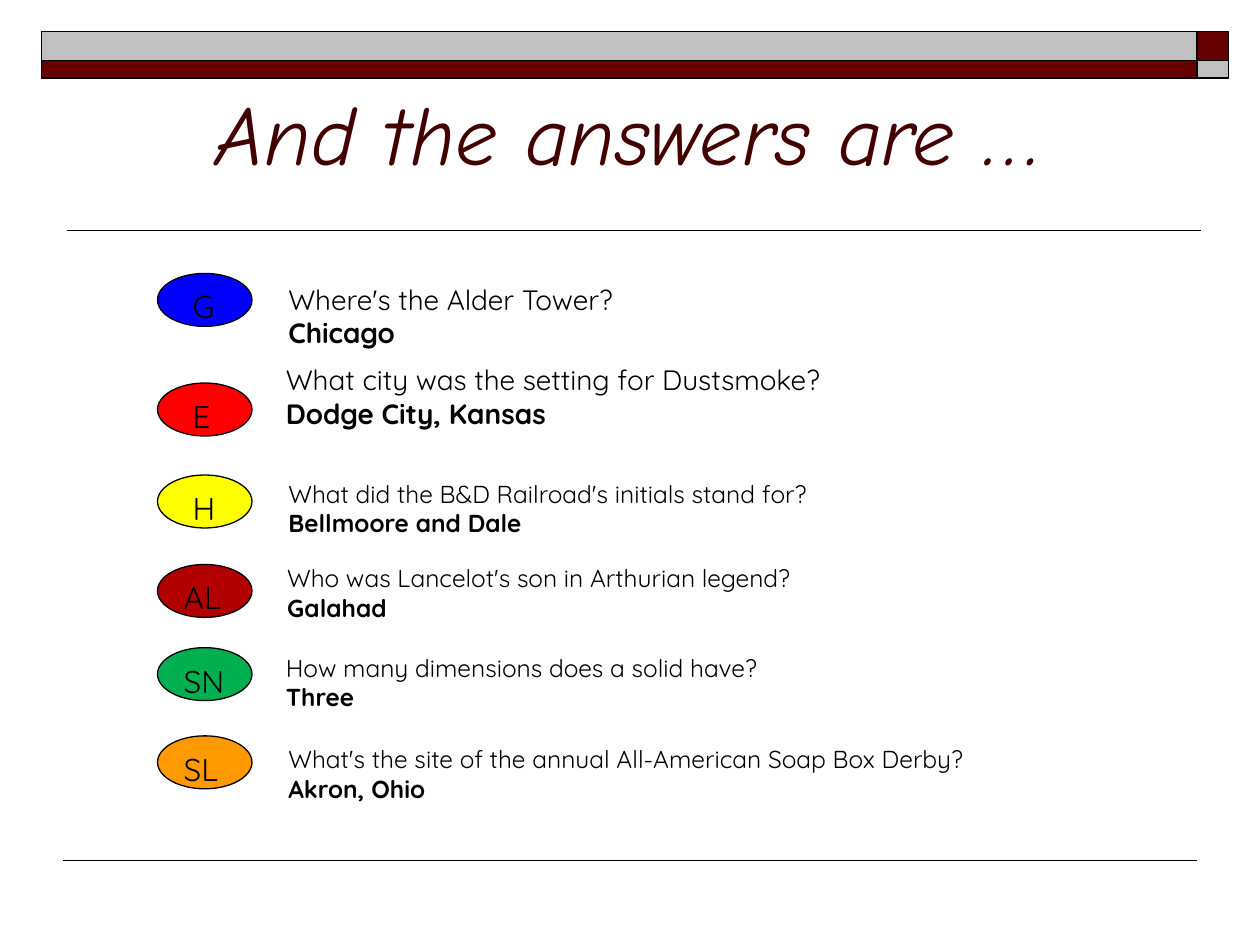
"""Build the quiz answers slide."""
from pptx import Presentation
from pptx.dml.color import RGBColor
from pptx.enum.shapes import MSO_CONNECTOR, MSO_SHAPE
from pptx.enum.text import MSO_ANCHOR, MSO_AUTO_SIZE, PP_ALIGN
from pptx.oxml.ns import qn
from pptx.util import Inches, Pt
from lxml import etree

RECT, OVAL, LINE = MSO_SHAPE.RECTANGLE, MSO_SHAPE.OVAL, MSO_CONNECTOR.STRAIGHT
TOP, BOTTOM = MSO_ANCHOR.TOP, MSO_ANCHOR.BOTTOM
LEFT, CENTER = PP_ALIGN.LEFT, PP_ALIGN.CENTER
GROW, FIXED = MSO_AUTO_SIZE.SHAPE_TO_FIT_TEXT, MSO_AUTO_SIZE.NONE

WIDE, HIGH = 10, 7.5
BLACK, MAROON, GREY = "000000", "660000", "C0C0C0"
TITLE = "And the answers are …"
COLS = [(0.33, 9.17), (9.5, 0.25)]
BANDS = [(0.25, 0.23, (GREY, MAROON)), (0.48, 0.14, (MAROON, GREY))]
RULES = [(9.53, 0.53, 1.83, 1), (0.5, 9.5, 6.83, 0.75)]
OVAL_X, OVAL_W, OVAL_H = 1.25, 0.75, 0.42

# tag, fill, oval top, text left, text top, text width, size, question, answer
ROWS = [
    ("G", "0000FF", 2.17, 2.19, 2.19, 6.17, 16,
     "Where's the Alder Tower?", "Chicago"),
    ("E", "FF0000", 3.04, 2.17, 2.83, 5.58, 16,
     "What city was the setting for Dustsmoke?", "Dodge City, Kansas"),
    ("H", "FFFF00", 3.77, 2.19, 3.75, 6.17, 14,
     "What did the B&D Railroad's initials stand for?", "Bellmoore and Dale"),
    ("AL", "B10000", 4.48, 2.18, 4.42, 7.08, 14,
     "Who was Lancelot's son in Arthurian legend?", "Galahad"),
    ("SN", "00B050", 5.14, 2.17, 5.13, 6.75, 14,
     "How many dimensions does a solid have?", "Three"),
    ("SL", "FF9900", 5.84, 2.19, 5.86, 7.17, 14,
     "What's the site of the annual All-American Soap Box Derby?", "Akron, Ohio"),
]


def paint(color, code):
    color.rgb = RGBColor.from_string(code)


def style(item, **form):
    for name, value in form.items():
        setattr(item, name, value)


def write(par, text, code=BLACK, align=LEFT, **form):
    par.text, par.alignment = text, align
    style(par.font, **form)
    paint(par.font.color, code)


def draw(slide, kind, box, fill, width):
    shape = slide.shapes.add_shape(kind, *map(Inches, box))
    shape.shadow.inherit = False
    shape.fill.solid()
    paint(shape.fill.fore_color, fill)
    paint(shape.line.color, BLACK)
    shape.line.width = Pt(width)
    return shape


def rule(slide, start, end, y, width):
    line = slide.shapes.add_connector(LINE, *map(Inches, (start, y, end, y)))
    paint(line.line.color, BLACK)
    line.line.width = Pt(width)
    etree.SubElement(line._element.spPr, qn("a:effectLst"))


def add_row(slide, tag, fill, y, left, top, width, size, ask, answer):
    oval = draw(slide, OVAL, (OVAL_X, y, OVAL_W, OVAL_H), fill, 0.75)
    inset = 0.17 if len(tag) == 1 else 0.1
    style(oval.text_frame, vertical_anchor=TOP, margin_left=Inches(inset))
    write(oval.text_frame.paragraphs[0], tag, name="Quicksand", size=Pt(18))
    high = 0.64 if size == 16 else 0.57
    box = slide.shapes.add_textbox(*map(Inches, (left, top, width, high)))
    frame = box.text_frame
    style(frame, word_wrap=True, auto_size=GROW)
    form = {"name": "Quicksand", "size": Pt(size)}
    write(frame.paragraphs[0], ask, **form)
    write(frame.add_paragraph(), answer, bold=True, **form)


def main():
    deck = Presentation()
    style(deck, slide_width=Inches(WIDE), slide_height=Inches(HIGH))
    slide = deck.slides.add_slide(deck.slide_layouts[5])
    for top, high, fills in BANDS:
        for (left, width), fill in zip(COLS, fills):
            draw(slide, RECT, (left, top, width, high), fill, 1)
    for ends in RULES:
        rule(slide, *ends)
    title = slide.shapes.title
    style(title, left=Inches(0.5), top=Inches(0.25),
          width=Inches(9), height=Inches(1.25))
    style(title.text_frame, vertical_anchor=BOTTOM, word_wrap=True, auto_size=FIXED)
    write(title.text_frame.paragraphs[0], TITLE, "420000", CENTER,
          name="Comic Neue", size=Pt(48), italic=True)
    for row in ROWS:
        add_row(slide, *row)
    deck.save("out.pptx")


if __name__ == "__main__":
    main()
